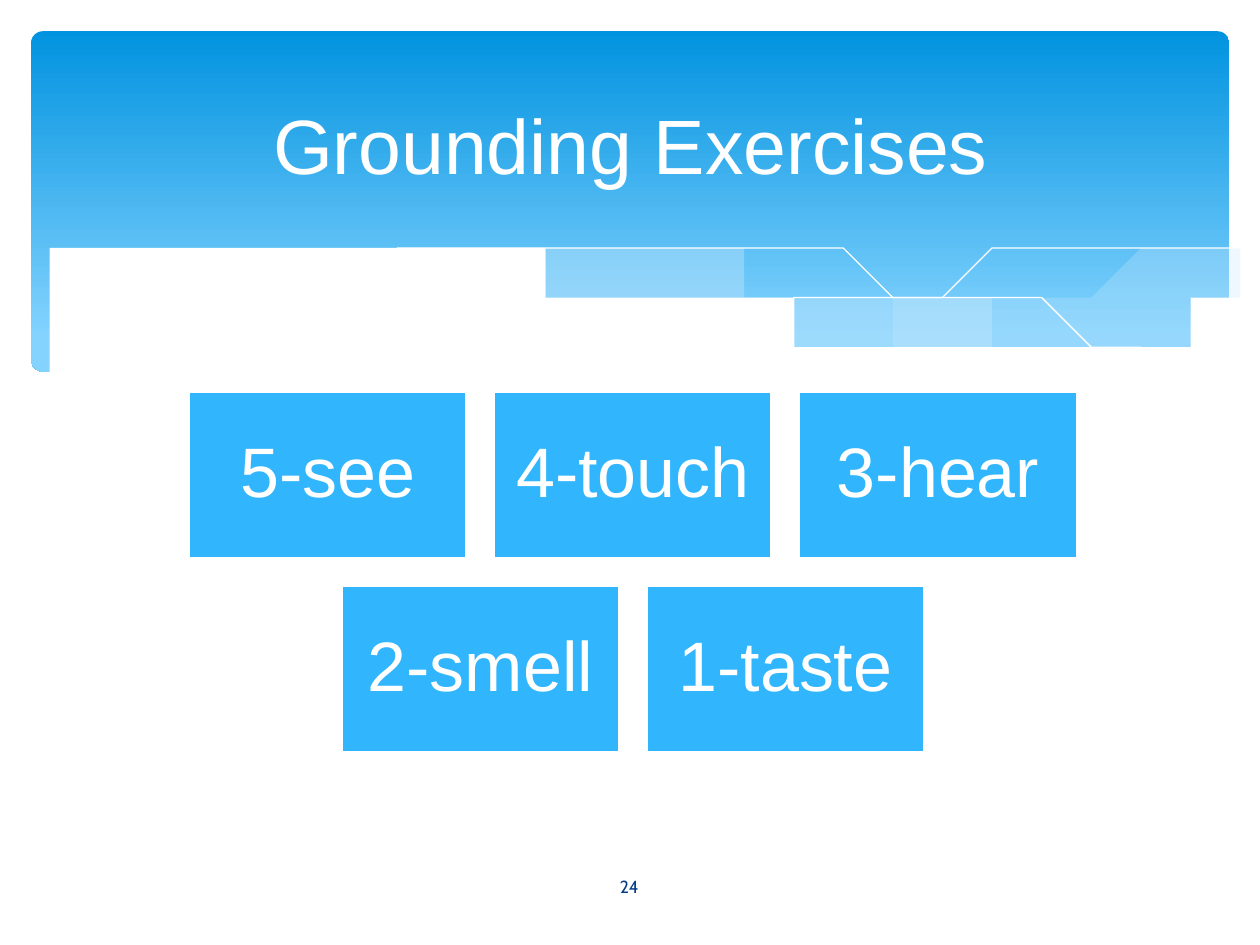
"""Build the Grounding Exercises slide: a wave banner above five tiles."""
from lxml.etree import SubElement
from pptx import Presentation
from pptx.dml.color import RGBColor
from pptx.enum.shapes import MSO_SHAPE as Preset
from pptx.enum.text import MSO_ANCHOR as Anchor, PP_ALIGN as Align
from pptx.oxml.ns import qn
from pptx.util import Cm, Pt

TITLE = "Grounding Exercises"
SENSE_ROWS = [["5-see", "4-touch", "3-hear"], ["2-smell", "1-taste"]]
PAGE_NUMBER = "24"
COLORS = {"banner_top": "0293E0", "banner_bottom": "83D3FE", "swell": "C6E7FC",
          "tile": "31B6FD", "white": "FFFFFF", "page": "073E87"}

RIGHT_SWELL = [
    [(24.79, 5.08), (23.39, 5.33), (21.87, 5.66), (19.79, 6.15), (17.93, 6.53), (16.79, 6.73)],
    [(16.79, 6.73), (18.26, 6.91), (19.53, 7.04), (20.68, 7.06), (22.15, 6.96),
     (23.39, 6.73), (24.1, 6.53), (24.79, 6.27)],
]
LONG_SWELL = [
    [(7.26, 4.85), (8.33, 4.75), (9.65, 4.7), (11.23, 4.8), (13.06, 5.03), (14.83, 5.36),
     (16.97, 5.87), (19.69, 6.45), (21.26, 6.73), (22.68, 6.93)],
    [(22.68, 6.93), (21.54, 7.04), (20.22, 7.06), (18.34, 6.96), (16.51, 6.71),
     (14.38, 6.3), (11.4, 5.64), (9.73, 5.26), (8.2, 4.98), (7.26, 4.85)],
]
FALLING_LINE = [
    [(7.85, 4.95), (8.74, 4.83), (10.19, 4.75), (11.91, 4.8), (14.12, 5), (16.15, 5.28),
     (18.47, 5.74), (21.11, 6.38), (23.04, 6.91)],
]
RISING_LINE = [
    [(15.57, 6.53), (17.65, 5.97), (19.71, 5.49), (22, 5.05), (23.47, 4.83), (24.77, 4.7)],
]
WHITE_WAVE = [
    [(0.58, 5.41), (1.5, 5.05), (2.69, 4.8), (4.5, 4.67), (6.35, 4.72), (8.64, 5),
     (11.35, 5.59), (14.1, 6.22), (16.97, 6.73), (19.33, 6.99), (20.9, 7.04),
     (22.53, 6.88), (23.88, 6.58), (24.82, 6.25)],
    [(24.82, 8.36), (0.58, 8.36)],
]
WAVES = [(RIGHT_SWELL, "swell", 29), (LONG_SWELL, "swell", 40),
         (FALLING_LINE, None, 100), (RISING_LINE, None, 100), (WHITE_WAVE, "white", 100)]

TILE_WIDTH, TILE_HEIGHT, TILE_GAP = 5.59, 3.35, 0.56
TILES_CENTER, TILES_TOP = 12.76, 7.9
CURVE_STEPS = 6


def rgb(name):
    return RGBColor.from_string(COLORS[name])


def smooth(knots):
    if len(knots) < 3:
        return knots
    padded = [knots[0], *knots, knots[-1]]
    points = [knots[0]]
    for a, b, c, d in zip(padded, padded[1:], padded[2:], padded[3:]):
        for step in range(1, CURVE_STEPS + 1):
            t = step / CURVE_STEPS
            points.append(tuple(
                (2 * q + (r - p) * t + (2 * p - 5 * q + 4 * r - s) * t ** 2
                 + (3 * q - p - 3 * r + s) * t ** 3) / 2
                for p, q, r, s in zip(a, b, c, d)))
    return points


def add_wave(shapes, edges, color, opacity):
    points = [point for edge in edges for point in smooth(edge)]
    builder = shapes.build_freeform(*points[0], scale=Cm(1))
    builder.add_line_segments(points[1:], close=color is not None)
    wave = builder.convert_to_shape()
    wave.shadow.inherit = False
    if color is None:
        wave.fill.background()
        wave.line.color.rgb = rgb("white")
        wave.line.width = Pt(0)
        return
    wave.fill.solid()
    wave.fill.fore_color.rgb = rgb(color)
    wave.line.fill.background()
    if opacity < 100:
        fill_color = next(wave.element.spPr.iter(qn("a:srgbClr")))
        SubElement(fill_color, qn("a:alpha"), val=str(opacity * 1000))


def add_banner(shapes):
    banner = shapes.add_shape(Preset.ROUNDED_RECTANGLE, Cm(0.63), Cm(0.63), Cm(24.15), Cm(6.86))
    banner.adjustments[0] = 0.034
    banner.shadow.inherit = False
    banner.line.fill.background()
    banner.fill.gradient()
    banner.fill.gradient_angle = 270
    stops = zip(banner.fill.gradient_stops, ("banner_top", "banner_bottom"), (0, 0.9))
    for stop, color, position in stops:
        stop.color.rgb = rgb(color)
        stop.position = position


def write(holder, text, size, font, color):
    frame = holder.text_frame
    frame.text = text
    frame.word_wrap = True
    frame.vertical_anchor = Anchor.MIDDLE
    paragraph = frame.paragraphs[0]
    paragraph.alignment = Align.CENTER
    paragraph.font.size = Pt(size)
    paragraph.font.name = font
    paragraph.font.color.rgb = rgb(color)
    return frame


def add_tile(shapes, sense, left, top):
    tile = shapes.add_shape(Preset.RECTANGLE, Cm(left), Cm(top), Cm(TILE_WIDTH), Cm(TILE_HEIGHT))
    tile.shadow.inherit = False
    tile.fill.solid()
    tile.fill.fore_color.rgb = rgb("tile")
    tile.line.color.rgb = rgb("white")
    tile.line.width = Pt(1.25)
    frame = write(tile, sense, 40, "Arial", "white")
    frame.paragraphs[0].line_spacing = 0.9
    frame.margin_left = frame.margin_right = Cm(0.43)
    frame.margin_top = frame.margin_bottom = Cm(0.43)


def main():
    deck = Presentation()
    deck.slide_width, deck.slide_height = Cm(25.4), Cm(19.05)
    slide = deck.slides.add_slide(deck.slide_layouts[5])
    shapes = slide.shapes

    add_banner(shapes)
    for edges, color, opacity in WAVES:
        add_wave(shapes, edges, color, opacity)

    title = shapes.title
    title.left, title.top, title.width, title.height = Cm(1.07), Cm(1.07), Cm(23.29), Cm(3.66)
    write(title, TITLE, 44, "Arial", "white")
    shapes.element.append(title.element)

    for row, senses in enumerate(SENSE_ROWS):
        row_width = len(senses) * (TILE_WIDTH + TILE_GAP) - TILE_GAP
        top = TILES_TOP + row * (TILE_HEIGHT + TILE_GAP)
        for column, sense in enumerate(senses):
            left = TILES_CENTER - row_width / 2 + column * (TILE_WIDTH + TILE_GAP)
            add_tile(shapes, sense, left, top)

    page = shapes.add_textbox(Cm(11.07), Cm(17.37), Cm(3.23), Cm(1.02))
    write(page, PAGE_NUMBER, 10, "Cabin", "page")
    deck.save("out.pptx")


if __name__ == "__main__":
    main()
